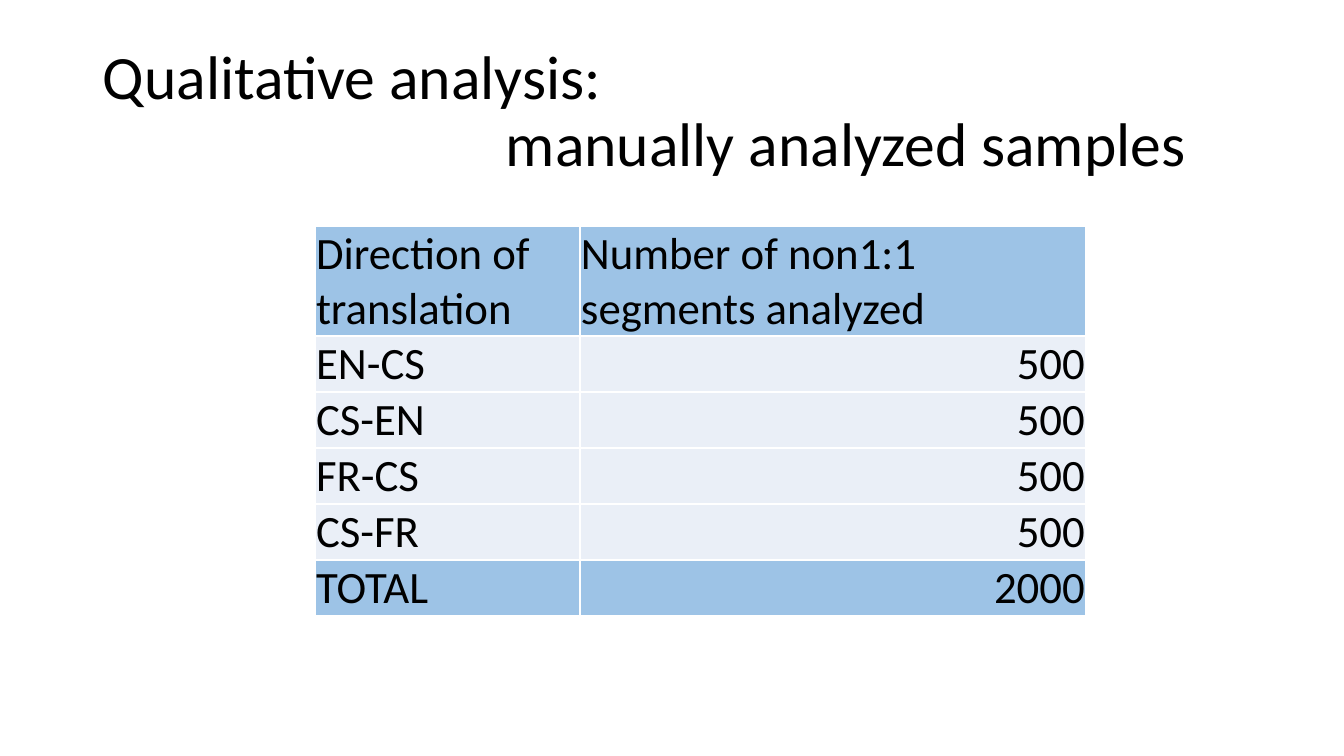
import pptx
import pptx.dml.color
import pptx.enum.text
import pptx.oxml
import pptx.oxml.ns
import pptx.util

PX = 914400 / 100.8
ANCHOR = pptx.enum.text.MSO_ANCHOR
ALIGN = pptx.enum.text.PP_ALIGN
BLACK, WHITE, BLUE, PALE = "000000", "FFFFFF", "9DC3E6", "EAEFF7"


def px(length):
    return pptx.util.Emu(round(length * PX))


def write(para, text, size):
    """Fill a paragraph with black Calibri text."""
    para.text = text
    for span in para.runs:
        span.font.name = "Calibri"
        span.font.size = pptx.util.Pt(size)
        span.font.color.rgb = pptx.dml.color.RGBColor.from_string(BLACK)


deck = pptx.Presentation()
deck.slide_width, deck.slide_height = px(1344), px(756)
page = deck.slides.add_slide(deck.slide_layouts[6])

# Title: the second line is indented by four inches
title = page.shapes.add_textbox(px(93), px(40), px(1159), px(146)).text_frame
title.word_wrap = True
title.vertical_anchor = ANCHOR.MIDDLE
title_lines = [("Qualitative analysis:", 0), ("manually analyzed samples", 403)]
for index, (text, indent) in enumerate(title_lines):
    para = title.add_paragraph() if index else title.paragraphs[0]
    write(para, text, 44)
    para.line_spacing = 0.9
    para._p.get_or_add_pPr().set("marL", str(px(indent)))

# Table of analyzed samples
samples = [
    ("Direction of \vtranslation", "Number of non1:1 \vsegments analyzed"),
    ("EN-CS", "500"),
    ("CS-EN", "500"),
    ("FR-CS", "500"),
    ("CS-FR", "500"),
    ("TOTAL", "2000"),
]
widths = [265, 506]
heights = [110] + [56] * (len(samples) - 1)
table = page.shapes.add_table(
    len(samples), len(widths), px(315), px(226), px(sum(widths)), px(sum(heights))
).table
for column, width in zip(table.columns, widths):
    column.width = px(width)
for row, height in zip(table.rows, heights):
    row.height = px(height)

cell_format = {
    "vertical_anchor": ANCHOR.BOTTOM,
    "margin_left": px(1),
    "margin_right": px(1),
    "margin_top": px(1),
    "margin_bottom": px(0),
}
last_row = len(samples) - 1
for row_index, sample in enumerate(samples):
    for column_index, text in enumerate(sample):
        cell = table.cell(row_index, column_index)
        for name, value in cell_format.items():
            setattr(cell, name, value)
        para = cell.text_frame.paragraphs[0]
        write(para, text, 32)
        if row_index and column_index:
            para.alignment = ALIGN.RIGHT
        # Borders come before the fill in the cell properties
        properties = cell._tc.get_or_add_tcPr()
        for side in ("lnL", "lnR", "lnT", "lnB"):
            properties.append(pptx.oxml.parse_xml(
                f'<a:{side} {pptx.oxml.ns.nsdecls("a")} w="12700"><a:solidFill>'
                f'<a:srgbClr val="{WHITE}"/></a:solidFill></a:{side}>'
            ))
        cell.fill.solid()
        fill = BLUE if row_index in (0, last_row) else PALE
        cell.fill.fore_color.rgb = pptx.dml.color.RGBColor.from_string(fill)

deck.save("out.pptx")
